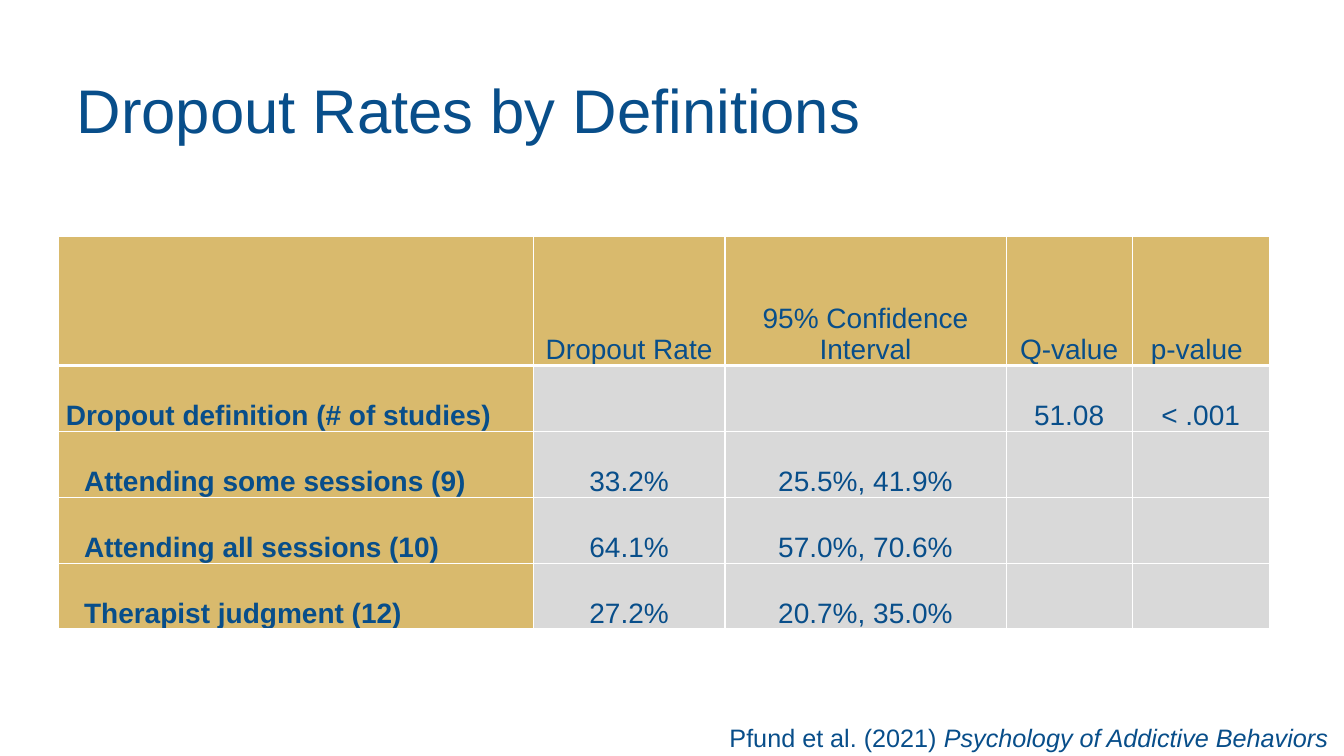
from lxml import etree
from pptx import Presentation
from pptx.dml.color import RGBColor
from pptx.enum.text import MSO_ANCHOR, PP_ALIGN
from pptx.oxml.ns import qn
from pptx.util import Pt

LEFT, CENTER = PP_ALIGN.LEFT, PP_ALIGN.CENTER
MIDDLE, BOTTOM = MSO_ANCHOR.MIDDLE, MSO_ANCHOR.BOTTOM

# Content
TITLE = "Dropout Rates by Definitions"
HEADER = ["", "Dropout Rate", "95% Confidence Interval", "Q-value", "p-value "]
DEFINITIONS = [
    ["Dropout definition (# of studies)", "", "", "51.08", "< .001"],
    ["Attending some sessions (9)", "33.2%", "25.5%, 41.9%", "", ""],
    ["Attending all sessions (10)", "64.1%", "57.0%, 70.6%", "", ""],
    ["Therapist judgment (12)", "27.2%", "20.7%, 35.0%", "", ""],
]
CITATION, JOURNAL = "Pfund et al. (2021) ", "Psychology of Addictive Behaviors"

# Style, lengths in points
FONT, BLUE, GOLD, GRAY, WHITE = "Arial", "084E8A", "D9BA6D", "D9D9D9", "FFFFFF"
COLUMN_WIDTHS = [339, 136.8, 200.9, 90, 97.9]
HEADER_HEIGHT, ROW_HEIGHT = 92.2, 47.1
CELL_MARGIN = 5.04
GROUP_INDENT, ITEM_INDENT = -0.7, 13


def color(hex_text):
    return RGBColor.from_string(hex_text)


def add_text(paragraph, text, size=20, bold=False, italic=False,
             align=LEFT, spacing=None, indent=0):
    paragraph.alignment = align
    if spacing:
        paragraph.line_spacing = spacing
    if indent:
        properties = paragraph._p.get_or_add_pPr()
        properties.set("marL", "0")
        properties.set("indent", str(Pt(indent)))
    run = paragraph.add_run()
    run.text = text
    font = run.font
    font.name, font.size = FONT, Pt(size)
    font.bold, font.italic = bold, italic
    font.color.rgb = color(BLUE)


def add_borders(cell, bottom):
    properties = cell._tc.get_or_add_tcPr()
    for side, width in (("L", 1), ("R", 1), ("T", 1), ("B", bottom)):
        line = etree.SubElement(properties, qn(f"a:ln{side}"), w=str(Pt(width)))
        fill = etree.SubElement(line, qn("a:solidFill"))
        etree.SubElement(fill, qn("a:srgbClr"), val=WHITE)


def build():
    deck = Presentation()
    deck.slide_width, deck.slide_height = Pt(960), Pt(540)
    slide = deck.slides.add_slide(deck.slide_layouts[5])

    # Title
    title = slide.shapes.title
    title.left, title.top = Pt(47.5), Pt(28.8)
    title.width, title.height = Pt(815), Pt(104.4)
    title.text_frame.vertical_anchor = MIDDLE
    add_text(title.text_frame.paragraphs[0], TITLE, size=44, spacing=0.9)

    # Dropout table
    rows = [HEADER] + DEFINITIONS
    heights = [HEADER_HEIGHT] + [ROW_HEIGHT] * len(DEFINITIONS)
    table = slide.shapes.add_table(
        len(rows), len(HEADER), Pt(42), Pt(168.8),
        Pt(sum(COLUMN_WIDTHS)), Pt(sum(heights))).table
    for column, width in zip(table.columns, COLUMN_WIDTHS):
        column.width = Pt(width)
    for row, height in zip(table.rows, heights):
        row.height = Pt(height)

    for r, values in enumerate(rows):
        for c, value in enumerate(values):
            cell = table.cell(r, c)
            is_header, is_label = r == 0, c == 0
            cell.vertical_anchor = BOTTOM
            cell.margin_left = cell.margin_right = Pt(CELL_MARGIN)
            cell.margin_top = cell.margin_bottom = 0
            add_borders(cell, bottom=3 if is_header else 1)
            cell.fill.solid()
            cell.fill.fore_color.rgb = color(GOLD if is_header or is_label else GRAY)
            if value:
                label_indent = GROUP_INDENT if r == 1 else ITEM_INDENT
                add_text(cell.text_frame.paragraphs[0], value, bold=is_label,
                         align=LEFT if is_label else CENTER,
                         spacing=None if is_header else 2.0,
                         indent=label_indent if is_label else 0)

    # Citation
    citation = slide.shapes.add_textbox(Pt(514), Pt(512.6), Pt(460), Pt(29))
    citation.text_frame.word_wrap = True
    source = citation.text_frame.paragraphs[0]
    add_text(source, CITATION, size=18)
    add_text(source, JOURNAL, size=18, italic=True)

    deck.save("out.pptx")


if __name__ == "__main__":
    build()
